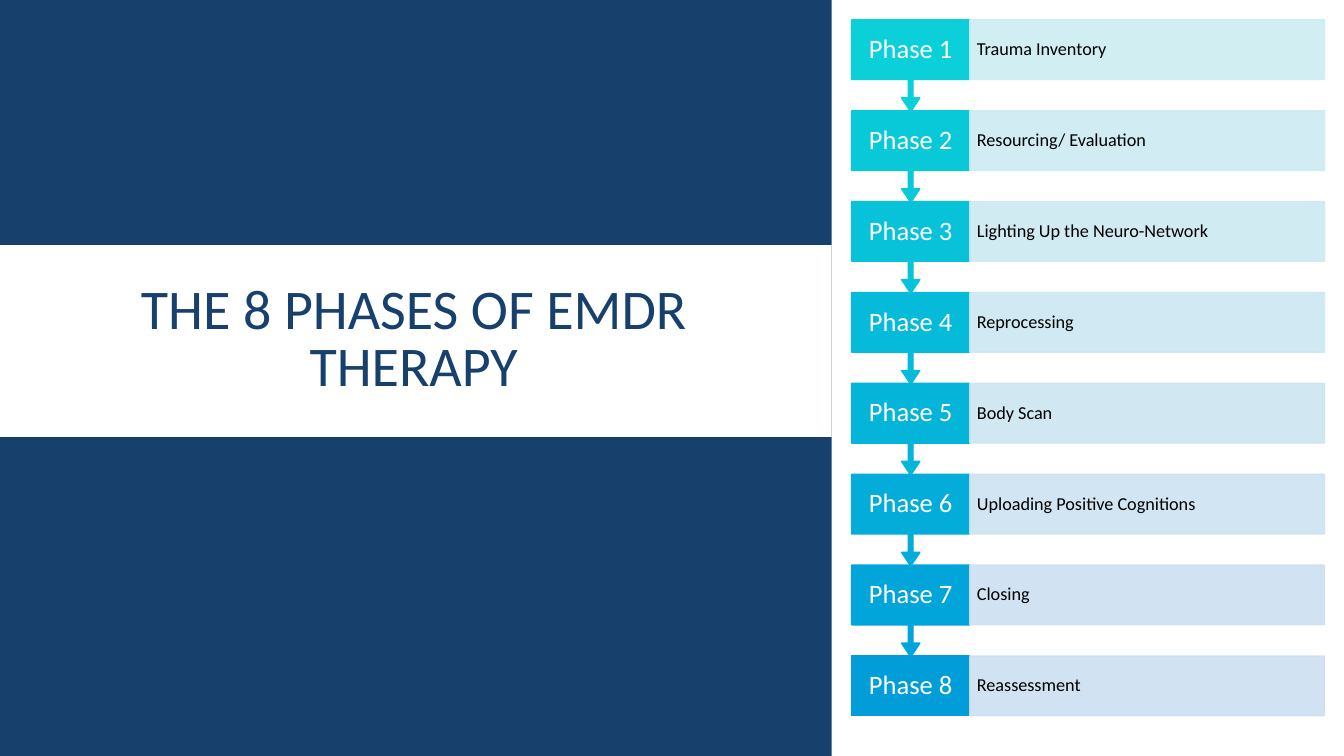
import pptx
import pptx.dml.color
import pptx.enum.shapes
import pptx.enum.text
import pptx.oxml.ns
import pptx.util
from lxml import etree

Pt = pptx.util.Pt
SHAPES = pptx.enum.shapes.MSO_SHAPE
ALIGN = pptx.enum.text.PP_ALIGN

TITLE = "THE 8 PHASES OF EMDR THERAPY"
FONT = "Calibri"
NAVY, WHITE, BLACK = "17406D", "FFFFFF", "000000"

# Description, phase colour, description band colour
PHASES = [
    ("Trauma Inventory", "0BD0D9", "CCEDF1"),
    ("Resourcing/ Evaluation", "09C9D9", "CCEBF1"),
    ("Lighting Up the Neuro-Network", "08C2D9", "CCE9F1"),
    ("Reprocessing", "06BBD9", "CCE7F1"),
    ("Body Scan", "05B4D9", "CCE5F1"),
    ("Uploading Positive Cognitions", "03ACD9", "CCE3F1"),
    ("Closing", "02A5D9", "CCE1F1"),
    ("Reassessment", "009DD9", "CCDFF1"),
]

SLIDE_WIDTH, SLIDE_HEIGHT = 960, 540
PANEL_WIDTH = 594
BAND_TOP, BAND_HEIGHT = 175, 137
FIRST_TOP, PITCH = 14.2, 64.92
ROW_HEIGHT, CALLOUT_HEIGHT = 42.6, 65.5
PHASE_LEFT, PHASE_WIDTH = 608.3, 84.4
DESCRIPTION_WIDTH = 253.4
CALLOUT_ADJUSTMENTS = (0.05, 0.1, 0.15, 0.65)
BAND_OPACITY = 90


def colour(hex_code):
    return pptx.dml.color.RGBColor.from_string(hex_code)


def add_block(page, kind, place, fill, outlined=False):
    block = page.shapes.add_shape(kind, *map(Pt, place))
    block.shadow.inherit = False
    block.fill.solid()
    block.fill.fore_color.rgb = colour(fill)
    if outlined:
        block.line.color.rgb = colour(fill)
        block.line.width = Pt(1)
    else:
        block.line.fill.background()
    return block


def set_opacity(block, percent):
    """Apply the same opacity to the fill and the outline."""
    for tint in block._element.spPr.iter(pptx.oxml.ns.qn("a:srgbClr")):
        alpha = etree.SubElement(tint, pptx.oxml.ns.qn("a:alpha"))
        alpha.set("val", str(percent * 1000))


def write(box, text, size, ink, align, margins, spacing=0.9):
    frame = box.text_frame
    frame.word_wrap = True
    frame.vertical_anchor = pptx.enum.text.MSO_ANCHOR.MIDDLE
    frame.margin_left = frame.margin_right = Pt(margins[0])
    frame.margin_top = frame.margin_bottom = Pt(margins[1])
    para = frame.paragraphs[0]
    para.text = text
    para.alignment = align
    para.line_spacing = spacing
    para.font.name = FONT
    para.font.size = Pt(size)
    para.font.color.rgb = colour(ink)


def add_title_panel(page):
    add_block(page, SHAPES.RECTANGLE, (0, 0, PANEL_WIDTH, SLIDE_HEIGHT), NAVY)
    add_block(page, SHAPES.RECTANGLE, (0, BAND_TOP, PANEL_WIDTH, BAND_HEIGHT), WHITE)
    title = page.shapes.add_textbox(Pt(59), Pt(184.3), Pt(473), Pt(118.8))
    write(title, TITLE, 40, NAVY, ALIGN.CENTER, (7.2, 3.6), 0.85)


def add_phase(page, number, description, fill, band_fill):
    top = FIRST_TOP + (number - 1) * PITCH
    phase_place = (PHASE_LEFT, top, PHASE_WIDTH, ROW_HEIGHT)
    if number == len(PHASES):
        add_block(page, SHAPES.RECTANGLE, phase_place, fill, outlined=True)
    else:
        place = (PHASE_LEFT, top, PHASE_WIDTH, CALLOUT_HEIGHT)
        callout = add_block(page, SHAPES.UP_ARROW_CALLOUT, place, fill, outlined=True)
        callout.rotation = 180
        for index, value in enumerate(CALLOUT_ADJUSTMENTS):
            callout.adjustments[index] = value
    label = page.shapes.add_textbox(*map(Pt, phase_place))
    write(label, f"Phase {number}", 19, WHITE, ALIGN.CENTER, (6, 10.8))

    place = (PHASE_LEFT + PHASE_WIDTH, top, DESCRIPTION_WIDTH, ROW_HEIGHT)
    band = add_block(page, SHAPES.RECTANGLE, place, band_fill, outlined=True)
    set_opacity(band, BAND_OPACITY)
    write(band, description, 13, BLACK, ALIGN.LEFT, (5.1, 13))


def main():
    deck = pptx.Presentation()
    deck.slide_width, deck.slide_height = Pt(SLIDE_WIDTH), Pt(SLIDE_HEIGHT)
    page = deck.slides.add_slide(deck.slide_layouts[6])
    add_title_panel(page)
    # Last phase first, so each arrow tip lies over the phase below it
    for number, phase in reversed(list(enumerate(PHASES, start=1))):
        add_phase(page, number, *phase)
    deck.save("out.pptx")


if __name__ == "__main__":
    main()
